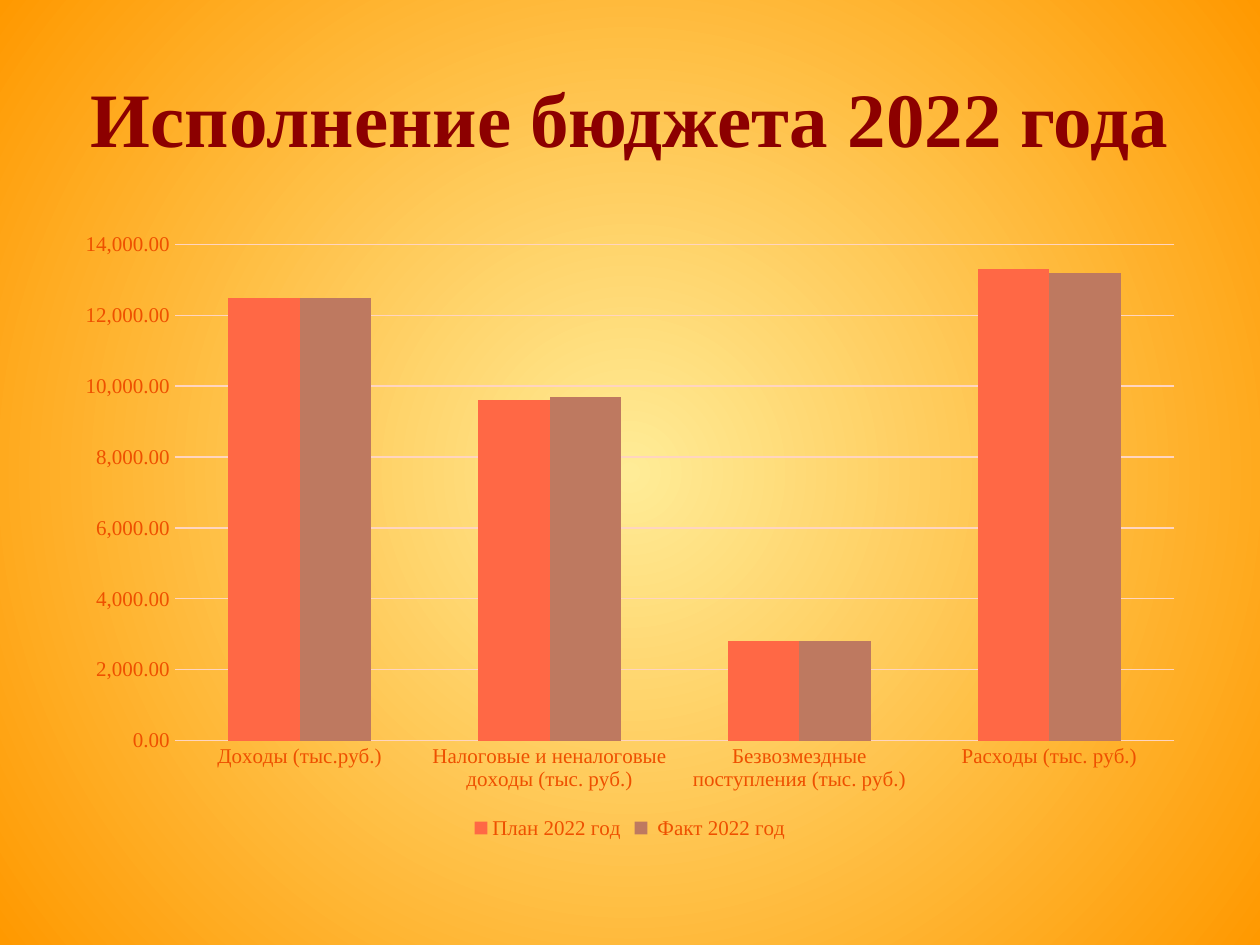
import pptx
import pptx.chart.data
import pptx.dml.color
import pptx.enum.chart
import pptx.enum.text
import pptx.oxml
import pptx.oxml.ns
import pptx.util
from pptx.util import Cm

COLOURS = {
    "glow": "FFEC97",
    "edge": "FF9900",
    "title": "8C0000",
    "label": "EE5000",
    "body": "5C1F00",
    "grid": "FFD5C0",
    "plan": "FF6845",
    "fact": "BE7960",
}
FONT = "Times New Roman"
CATEGORIES = [
    "Доходы (тыс.руб.)",
    "Налоговые и неналоговые доходы (тыс. руб.)",
    "Безвозмездные поступления (тыс. руб.)",
    "Расходы (тыс. руб.)",
]
SERIES = [
    ("План 2022 год", "plan", (12500, 9600, 2800, 13300)),
    (" Факт 2022 год", "fact", (12500, 9700, 2800, 13200)),
]


def colour(name):
    return pptx.dml.color.RGBColor.from_string(COLOURS[name])


def apply_format(target, values):
    for name, value in values.items():
        setattr(target, name, value)


def format_font(font, size, colour_name, bold=False):
    apply_format(font, {"name": FONT, "size": pptx.util.Pt(size), "bold": bold})
    font.color.rgb = colour(colour_name)


def paint_background(page):
    fill = page.background.fill
    fill.gradient()
    for stop, name, position in zip(fill.gradient_stops, ("glow", "edge"), (0, 1)):
        stop.color.rgb = colour(name)
        stop.position = position
    gradient = page.element.find(".//" + pptx.oxml.ns.qn("a:gradFill"))
    gradient.remove(gradient.find(pptx.oxml.ns.qn("a:lin")))
    gradient.append(pptx.oxml.parse_xml(
        f'<a:path {pptx.oxml.ns.nsdecls("a")} path="circle">'
        '<a:fillToRect l="50000" t="50000" r="50000" b="50000"/></a:path>'))


def add_title(page, box):
    frame = page.shapes.add_textbox(*box).text_frame
    apply_format(frame, {
        "word_wrap": True,
        "vertical_anchor": pptx.enum.text.MSO_ANCHOR.MIDDLE,
    })
    para = frame.paragraphs[0]
    para.alignment = pptx.enum.text.PP_ALIGN.CENTER
    span = para.add_run()
    span.text = "Исполнение бюджета 2022 года"
    format_font(span.font, 44, "title", True)


def add_budget_chart(page, box):
    data = pptx.chart.data.CategoryChartData(number_format="#,##0.00")
    data.categories = CATEGORIES
    for name, _, values in SERIES:
        data.add_series(name, values)
    chart = page.shapes.add_chart(
        pptx.enum.chart.XL_CHART_TYPE.COLUMN_CLUSTERED, *box, data).chart
    apply_format(chart, {"has_title": False, "has_legend": True})
    format_font(chart.font, 10, "body")
    apply_format(chart.legend, {
        "position": pptx.enum.chart.XL_LEGEND_POSITION.BOTTOM,
        "include_in_layout": False,
    })
    format_font(chart.legend.font, 12, "label")

    plot = chart.plots[0]
    apply_format(plot, {"gap_width": 150, "overlap": 0, "vary_by_categories": False})
    for series, (_, colour_name, _) in zip(plot.series, SERIES):
        series.format.fill.solid()
        series.format.fill.fore_color.rgb = colour(colour_name)
        series.invert_if_negative = False

    no_tick = pptx.enum.chart.XL_TICK_MARK.NONE
    for axis in (chart.category_axis, chart.value_axis):
        apply_format(axis, {"major_tick_mark": no_tick, "minor_tick_mark": no_tick})
        axis.format.line.fill.background()
        format_font(axis.tick_labels.font, 12, "label")
    value_axis = chart.value_axis
    apply_format(value_axis, {
        "minimum_scale": 0,
        "maximum_scale": 14000,
        "major_unit": 2000,
        "has_major_gridlines": True,
    })
    apply_format(value_axis.tick_labels, {
        "number_format": "#,##0.00",
        "number_format_is_linked": False,
    })
    grid = value_axis.major_gridlines.format.line
    grid.color.rgb = colour("grid")
    grid.width = pptx.util.Pt(0.75)


def main():
    deck = pptx.Presentation()
    apply_format(deck, {"slide_width": Cm(25.4), "slide_height": Cm(19.05)})
    page = deck.slides.add_slide(deck.slide_layouts[6])
    margin = Cm(1.27)
    width = deck.slide_width - 2 * margin
    paint_background(page)
    add_title(page, (margin, Cm(0.76), width, Cm(3.18)))
    add_budget_chart(page, (margin, Cm(4.45), width, Cm(12.57)))
    deck.save("out.pptx")


if __name__ == "__main__":
    main()
